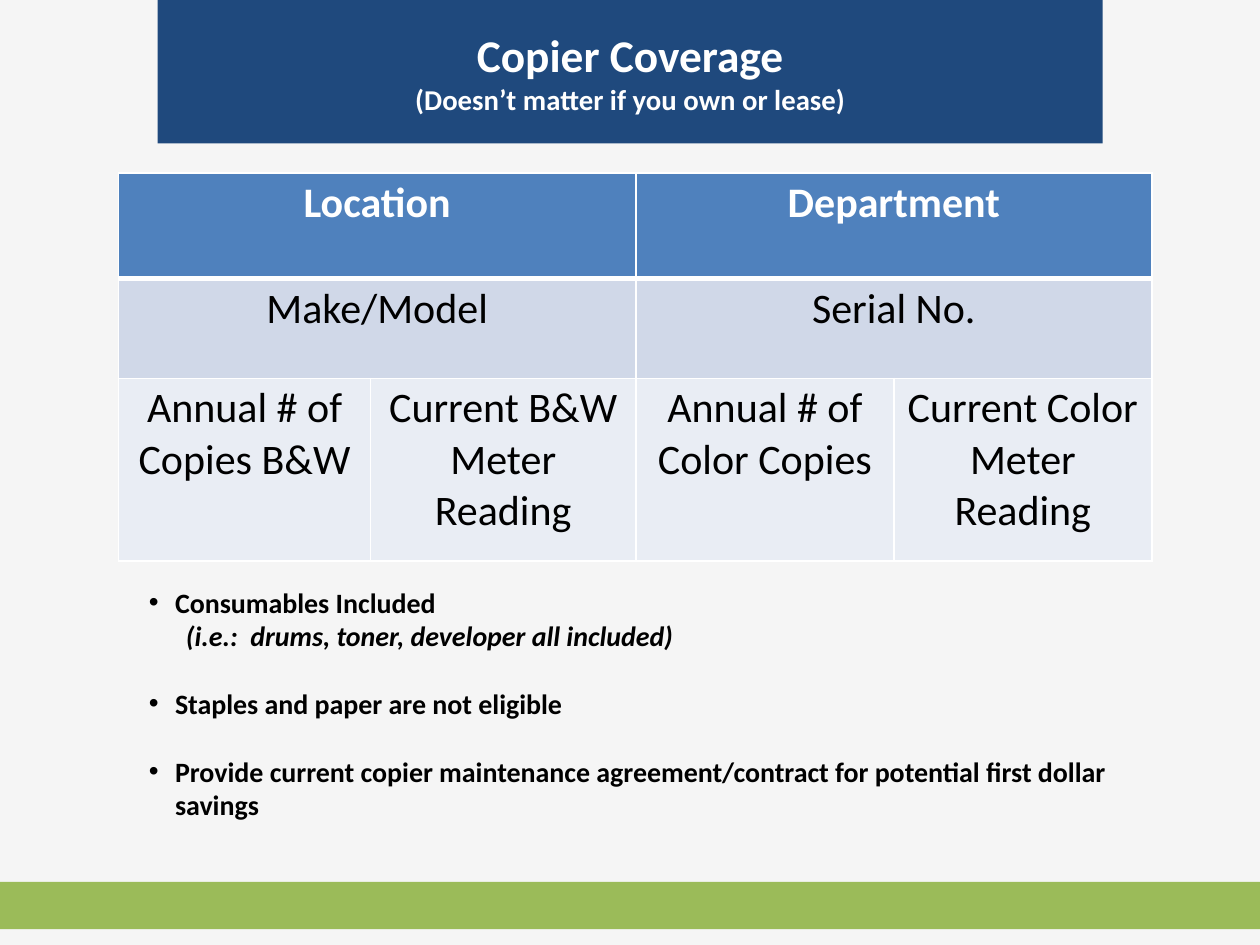
from lxml import etree
from pptx import Presentation
from pptx.dml.color import RGBColor
from pptx.enum.shapes import MSO_SHAPE
from pptx.enum.text import MSO_ANCHOR, PP_ALIGN
from pptx.oxml.ns import qn
from pptx.util import Cm, Pt

RECT = MSO_SHAPE.RECTANGLE
MID = MSO_ANCHOR.MIDDLE
CENTER = PP_ALIGN.CENTER
LEFT = PP_ALIGN.LEFT

PAPER = RGBColor(0xF5, 0xF5, 0xF5)
WHITE = RGBColor(0xFF, 0xFF, 0xFF)
BLACK = RGBColor(0x00, 0x00, 0x00)
GREEN = RGBColor(0x9B, 0xBB, 0x59)
NAVY = RGBColor(0x1F, 0x49, 0x7D)
BLUE = RGBColor(0x4F, 0x81, 0xBD)
MIST = RGBColor(0xD0, 0xD8, 0xE8)
PALE = RGBColor(0xE9, 0xED, 0xF4)

PAD = dict.fromkeys(("margin_left", "margin_top", "margin_right", "margin_bottom"), 0)
CELL_PAD = {"margin_left": Cm(0.18), "margin_top": Cm(0.09),
            "margin_right": Cm(0.18), "margin_bottom": Cm(0.09)}

TITLE = [("Copier Coverage", 25.9), ("(Doesn’t matter if you own or lease)", 16.4)]
COLS = [5.08, 5.35, 5.2, 5.2]
ROWS = [
    (2.13, BLUE, WHITE, True, ["Location", "Department"]),
    (2.01, MIST, BLACK, False, ["Make/Model", "Serial No."]),
    (3.68, PALE, BLACK, False, ["Annual # of Copies B&W", "Current B&W Meter Reading",
                                "Annual # of Color Copies", "Current Color Meter Reading"]),
]
NOTES = [
    ("Consumables Included", True, 0),
    ("(i.e.:  drums, toner, developer all included)", False, 0),
    ("Staples and paper are not eligible", True, 19.5),
    ("Provide current copier maintenance agreement/contract for potential first dollar savings",
     True, 19.5),
]


def apply(obj, form):
    for name, val in form.items():
        setattr(obj, name, val)


class Deck:
    font = "Calibri"

    def __init__(self, wide, high):
        self.file = Presentation()
        apply(self.file, {"slide_width": Cm(wide), "slide_height": Cm(high)})
        self.slide = self.file.slides.add_slide(self.file.slide_layouts[6])
        fill = self.slide.background.fill
        fill.solid()
        fill.fore_color.rgb = PAPER

    def label(self, para, text, size, color, align=CENTER, **form):
        para.alignment = align
        run = para.add_run()
        run.text = text
        apply(run.font, {"name": self.font, "size": Pt(size), **form})
        run.font.color.rgb = color

    def lines(self, frame, count):
        return [frame.paragraphs[0]] + [frame.add_paragraph() for _ in range(count - 1)]

    def block(self, box, color):
        shape = self.slide.shapes.add_shape(RECT, *map(Cm, box))
        shape.shadow.inherit = False
        shape.fill.solid()
        shape.fill.fore_color.rgb = color
        shape.line.fill.background()
        return shape

    def banner(self, box, color, items):
        frame = self.block(box, color).text_frame
        apply(frame, {"word_wrap": True, "vertical_anchor": MID, **PAD})
        for para, (text, size) in zip(self.lines(frame, len(items)), items):
            self.label(para, text, size, WHITE, bold=True)

    def edge(self, cell, top, bottom):
        props = cell._tc.get_or_add_tcPr()
        for tag, width in (("a:lnL", 1), ("a:lnR", 1), ("a:lnT", top), ("a:lnB", bottom)):
            line = etree.SubElement(props, qn(tag), w=str(Pt(width)))
            fill = etree.SubElement(line, qn("a:solidFill"))
            etree.SubElement(fill, qn("a:srgbClr"), val=str(WHITE))

    def table(self, left, top, cols, rows):
        wide, high = sum(cols), sum(row[0] for row in rows)
        grid = self.slide.shapes.add_table(
            len(rows), len(cols), *map(Cm, (left, top, wide, high))).table
        for col, size in zip(grid.columns, cols):
            col.width = Cm(size)
        for r, (size, back, color, bold, texts) in enumerate(rows):
            grid.rows[r].height = Cm(size)
            span = len(cols) // len(texts)
            for c in range(len(cols)):
                cell = grid.cell(r, c)
                self.edge(cell, 3 if r == 1 else 1, 3 if r == 0 else 1)
                cell.fill.solid()
                cell.fill.fore_color.rgb = back
                apply(cell, CELL_PAD)
            for i, text in enumerate(texts):
                cell = grid.cell(r, i * span)
                if span > 1:
                    cell.merge(grid.cell(r, (i + 1) * span - 1))
                self.label(cell.text_frame.paragraphs[0], text, 24, color, bold=bold)

    def notes(self, box, items):
        frame = self.slide.shapes.add_textbox(*map(Cm, box)).text_frame
        apply(frame, {"word_wrap": True, **PAD})
        for para, (text, dot, gap) in zip(self.lines(frame, len(items)), items):
            para.space_before = Pt(gap)
            self.label(para, text, 16, BLACK, LEFT, bold=True, italic=not dot)
            props = para._p.get_or_add_pPr()
            props.set("marL", str(Cm(0.56 if dot else 0.78)))
            props.set("indent", str(Cm(-0.53 if dot else 0)))
            if dot:
                etree.SubElement(props, qn("a:buFont"), typeface="Arial")
                etree.SubElement(props, qn("a:buChar"), char="•")

    def save(self):
        self.file.save("out.pptx")


def main():
    deck = Deck(25.4, 19.05)
    deck.block((0, 17.78, 25.4, 0.95), GREEN)
    deck.notes((2.97, 11.8, 19.69, 5.23), NOTES)
    deck.banner((3.18, 0, 19.05, 2.89), NAVY, TITLE)
    deck.table(2.39, 3.49, COLS, ROWS)
    deck.save()


if __name__ == "__main__":
    main()
